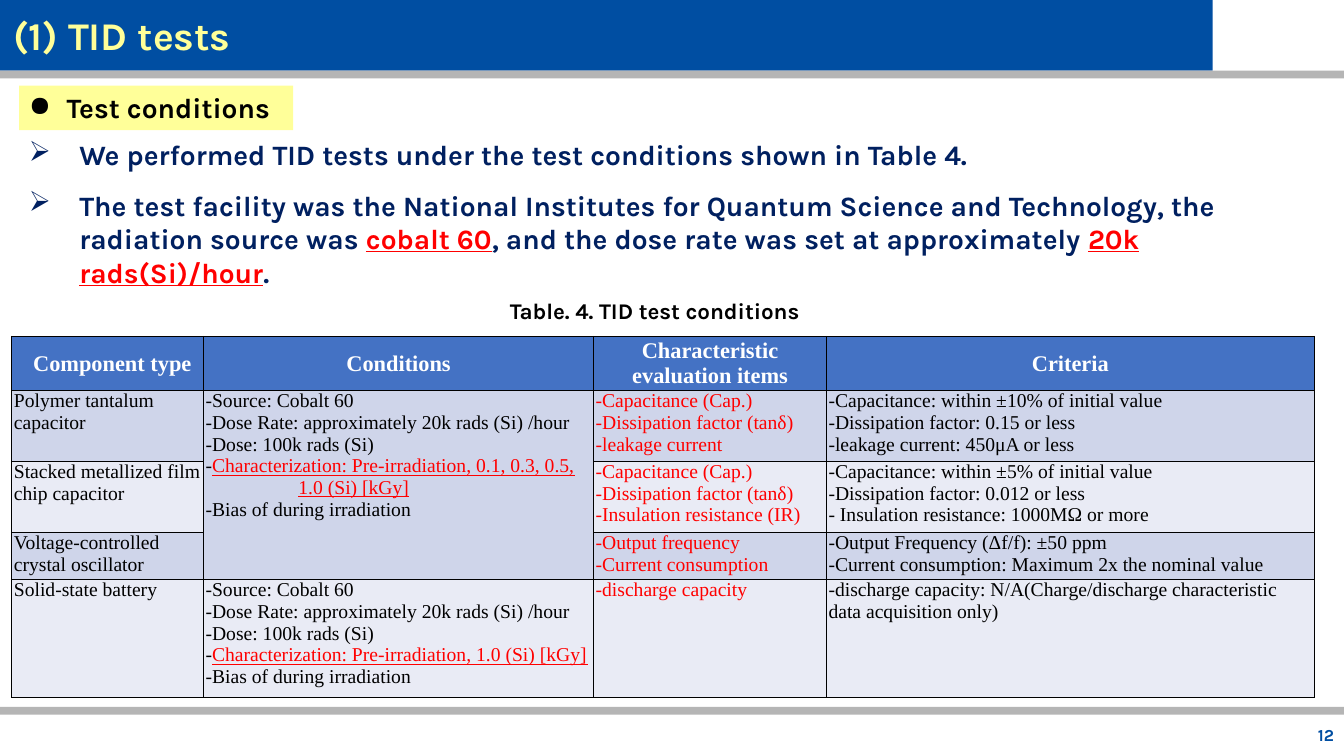
from dataclasses import dataclass

from lxml import etree
from pptx import Presentation
from pptx.dml.color import RGBColor as RGB
from pptx.enum.shapes import MSO_SHAPE as SHAPE
from pptx.enum.text import MSO_ANCHOR as ANCHOR, MSO_AUTO_SIZE as AUTO, PP_ALIGN as ALIGN
from pptx.oxml.ns import qn
from pptx.util import Cm, Pt


@dataclass(frozen=True)
class Theme:
    blue: str = "004EA2"
    grey: str = "B5B5B5"
    yellow: str = "FFFF99"
    navy: str = "002060"
    red: str = "FF0000"
    black: str = "000000"
    white: str = "FFFFFF"
    header: str = "4472C4"
    bands: tuple = ("CFD5EA", "E9EBF5")
    font: str = "Karla"
    table_font: str = "Times New Roman"
    title: int = 28
    body: int = 20
    caption: int = 16
    cell: int = 14
    number: int = 12


@dataclass
class Para:
    """Text whose parts between bars are red and underlined."""
    text: str
    margin: float = 0
    indent: float = 0
    bullet: str = ""
    before: int = 0
    align: ALIGN = ALIGN.LEFT


class Deck:
    def __init__(self, prs, theme):
        self.theme = theme
        self.slide = prs.slides.add_slide(prs.slide_layouts[6])

    def add_paras(self, tf, paras, size, color, font=None, bold=True):
        for i, para in enumerate(paras):
            p = tf.add_paragraph() if i else tf.paragraphs[0]
            pPr = p._p.get_or_add_pPr()
            pPr.set("marL", str(Cm(para.margin)))
            pPr.set("indent", str(Cm(para.indent)))
            if para.bullet:
                etree.SubElement(pPr, qn("a:buChar")).set("char", para.bullet)
            p.alignment = para.align
            if para.before:
                p.space_before = Pt(para.before)
            for j, part in enumerate(para.text.split("|")):
                if not part:
                    continue
                marked = j % 2 == 1
                r = p.add_run()
                r.text = part
                r.font.name = font or self.theme.font
                r.font.size = Pt(size)
                r.font.bold = bold
                r.font.underline = marked
                r.font.color.rgb = RGB.from_string(self.theme.red if marked else color)

    def rect(self, x, y, w, h, fill):
        sp = self.slide.shapes.add_shape(SHAPE.RECTANGLE, Cm(x), Cm(y), Cm(w), Cm(h))
        sp.shadow.inherit = False
        sp.fill.solid()
        sp.fill.fore_color.rgb = RGB.from_string(fill)
        sp.line.fill.background()
        return sp

    def text(self, x, y, w, h, paras, size, color, fill=None, anchor=ANCHOR.TOP):
        if fill:
            sp = self.rect(x, y, w, h, fill)
        else:
            sp = self.slide.shapes.add_textbox(Cm(x), Cm(y), Cm(w), Cm(h))
        tf = sp.text_frame
        tf.word_wrap = True
        tf.vertical_anchor = anchor
        tf.auto_size = AUTO.SHAPE_TO_FIT_TEXT if anchor == ANCHOR.TOP else AUTO.NONE
        self.add_paras(tf, paras, size, color)

    def border(self, cell):
        tcPr = cell._tc.get_or_add_tcPr()
        for side in ("lnL", "lnR", "lnT", "lnB"):
            ln = etree.SubElement(tcPr, qn(f"a:{side}"), w=str(Pt(1)))
            fill = etree.SubElement(ln, qn("a:solidFill"))
            etree.SubElement(fill, qn("a:srgbClr"), val=self.theme.black)

    def table(self, x, y, widths, heights, header, rows, merges):
        t = self.theme
        frame = self.slide.shapes.add_table(
            len(heights), len(widths), Cm(x), Cm(y), Cm(sum(widths)), Cm(sum(heights)))
        tbl = frame.table
        for col, width in zip(tbl.columns, widths):
            col.width = Cm(width)
        for row, height in zip(tbl.rows, heights):
            row.height = Cm(height)
        for i, row in enumerate([header] + rows):
            for j, paras in enumerate(row):
                cell = tbl.cell(i, j)
                self.border(cell)
                cell.fill.solid()
                cell.fill.fore_color.rgb = RGB.from_string(t.bands[(i - 1) % 2] if i else t.header)
                cell.margin_left = cell.margin_right = Cm(0.05)
                cell.margin_top = cell.margin_bottom = 0
                cell.vertical_anchor = ANCHOR.TOP if i else ANCHOR.MIDDLE
                size = t.cell if i else t.caption
                color = (t.red if j == 2 else t.black) if i else t.white
                self.add_paras(cell.text_frame, paras, size, color, t.table_font, bold=i == 0)
        for first, last in merges:
            tbl.cell(*first).merge(tbl.cell(*last))


def lines(*texts):
    return [Para(text) for text in texts]


def conditions(*characterization):
    return [
        *lines("-Source: Cobalt 60",
               "-Dose Rate: approximately 20k rads (Si) /hour",
               "-Dose: 100k rads (Si)"),
        *characterization,
        Para("-Bias of during irradiation"),
    ]


def main():
    prs = Presentation()
    prs.slide_width, prs.slide_height = Cm(33.87), Cm(19.05)
    t = Theme()
    deck = Deck(prs, t)

    # Header band, rules and slide number
    deck.rect(0, 0, 30.56, 1.78, t.blue)
    for y in (1.78, 17.81):
        deck.rect(0, y, 33.87, 0.2, t.grey)
    deck.text(32.39, 18.01, 1.48, 1.02, [Para("12", align=ALIGN.RIGHT)],
              t.number, t.blue, anchor=ANCHOR.MIDDLE)
    deck.text(0.08, 0.33, 30.48, 1.12, lines("(1) TID tests"),
              t.title, t.yellow, anchor=ANCHOR.MIDDLE)

    # Section heading and statements
    deck.text(0.48, 2.16, 6.91, 1.12, [Para("Test conditions", 0.95, -0.95, "●")],
              t.body, t.black, fill=t.yellow)
    deck.text(0.48, 3.35, 33.05, 3.25, [
        Para("We performed TID tests under the test conditions shown in Table 4.",
             1.27, -1.27, "➢"),
        Para("The test facility was the National Institutes for Quantum Science and "
             "Technology, the radiation source was |cobalt 60|, and the dose rate was "
             "set at approximately |20k rads(Si)/hour|.", 1.27, -1.27, "➢", before=12),
    ], t.body, t.navy)

    # Table with caption
    deck.text(12.6, 7.37, 8.66, 0.94, lines("Table. 4. TID test conditions"),
              t.caption, t.black, fill=t.white)
    header = [[Para(name, margin, align=ALIGN.CENTER)] for name, margin in (
        ("Component type", 0.23), ("Conditions", 0),
        ("Characteristic evaluation items", 0), ("Criteria", 0))]
    rows = [
        [lines("Polymer tantalum capacitor"),
         conditions(Para("-|Characterization: Pre-irradiation, 0.1, 0.3, 0.5,|", 2.34, -2.34),
                    Para("|1.0 (Si) [kGy]|", 2.34)),
         lines("-Capacitance (Cap.)", "-Dissipation factor (tanδ)", "-leakage current"),
         lines("-Capacitance: within ±10% of initial value",
               "-Dissipation factor: 0.15 or less", "-leakage current: 450μA or less")],
        [lines("Stacked metallized film chip capacitor"), [],
         lines("-Capacitance (Cap.)", "-Dissipation factor (tanδ)",
               "-Insulation resistance (IR)"),
         lines("-Capacitance: within ±5% of initial value",
               "-Dissipation factor: 0.012 or less",
               "- Insulation resistance: 1000MΩ or more")],
        [lines("Voltage-controlled crystal oscillator"), [],
         lines("-Output frequency", "-Current consumption"),
         lines("-Output Frequency (Δf/f): ±50 ppm",
               "-Current consumption: Maximum 2x the nominal value")],
        [lines("Solid-state battery"),
         conditions(Para("-|Characterization: Pre-irradiation, 1.0 (Si) [kGy]|", 2.34, -2.34)),
         lines("-discharge capacity"),
         lines("-discharge capacity: N/A(Charge/discharge characteristic "
               "data acquisition only)")],
    ]
    deck.table(0.3, 8.48, [4.83, 9.83, 5.87, 12.29], [1.36, 1.78, 1.79, 1.19, 2.96],
               header, rows, merges=[((1, 1), (3, 1))])

    prs.save("out.pptx")


if __name__ == "__main__":
    main()
